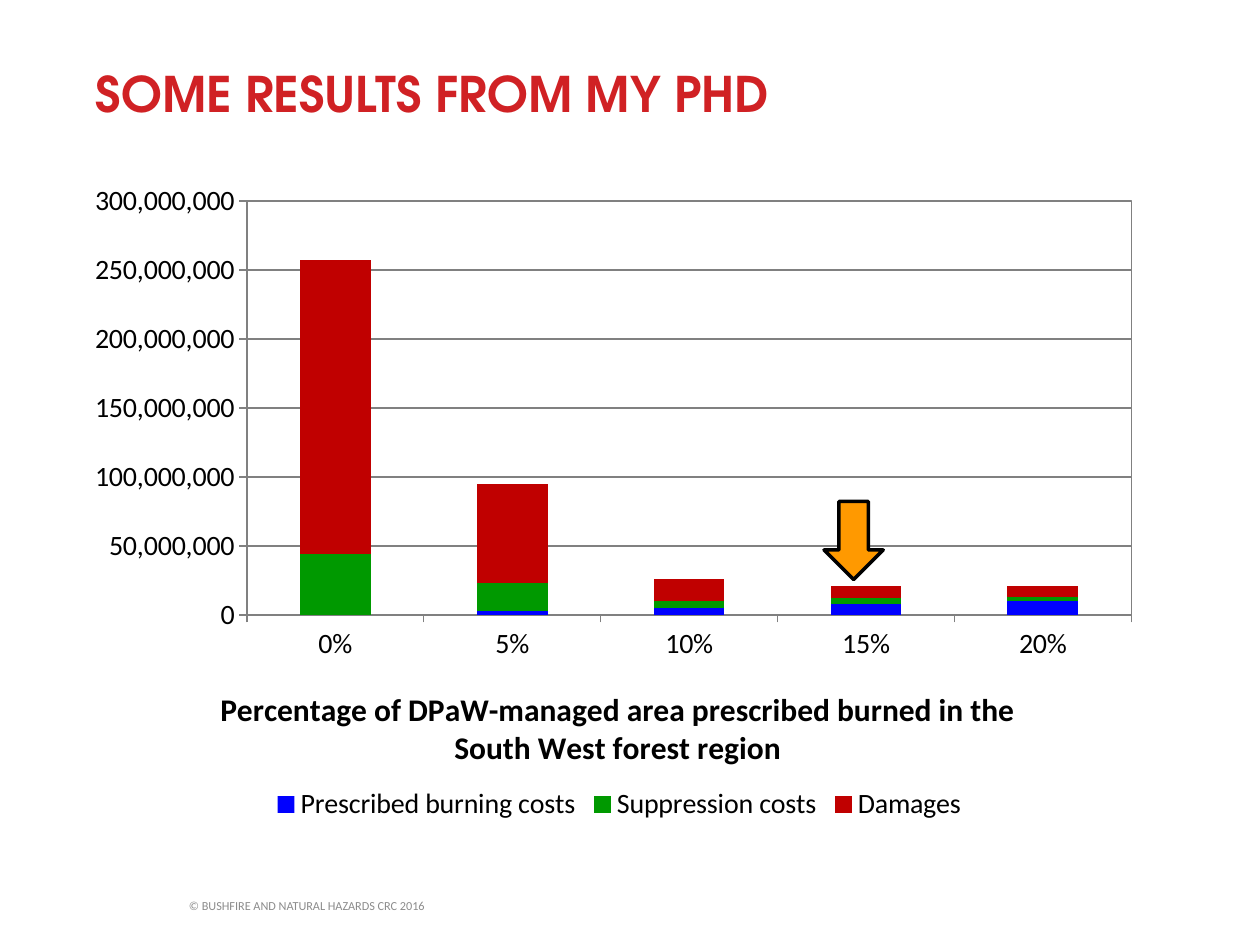
from dataclasses import dataclass

from pptx import Presentation
from pptx.chart.data import CategoryChartData
from pptx.dml.color import RGBColor
from pptx.enum.chart import XL_CHART_TYPE, XL_LEGEND_POSITION, XL_TICK_MARK
from pptx.enum.shapes import MSO_SHAPE
from pptx.enum.text import MSO_ANCHOR, PP_ALIGN
from pptx.oxml import parse_xml
from pptx.oxml.ns import nsdecls, qn
from pptx.util import Inches, Pt


@dataclass(frozen=True)
class Theme:
    heading_font: str = "TeX Gyre Adventor"
    body_font: str = "Calibri"
    title_color: str = "D02124"
    footer_color: str = "8C8C8C"
    text_color: str = "000000"
    axis_color: str = "808080"
    arrow_color: str = "FF9900"
    title_size: int = 28
    axis_title_size: int = 18
    label_size: int = 16
    footer_size: int = 7


THEME = Theme()
CATEGORIES = ["0%", "5%", "10%", "15%", "20%"]
COSTS = [
    ("Prescribed burning costs", "0000FF", [0, 3000000, 5000000, 8000000, 10000000]),
    ("Suppression costs", "009900", [44000000, 20000000, 5000000, 4000000, 3000000]),
    ("Damages", "C00000", [213000000, 72000000, 16000000, 9000000, 8000000]),
]


def format_font(font, name=THEME.body_font, size=THEME.label_size,
                color=THEME.text_color, bold=False):
    font.name = name
    font.size = Pt(size)
    font.bold = bold
    font.color.rgb = RGBColor.from_string(color)


def write_text(text_frame, text, align=PP_ALIGN.LEFT, **font_format):
    paragraph = text_frame.paragraphs[0]
    paragraph.alignment = align
    run = paragraph.add_run()
    run.text = text
    format_font(run.font, **font_format)


def set_frame(text_frame, anchor, right=0):
    text_frame.word_wrap = True
    text_frame.vertical_anchor = anchor
    text_frame.margin_left = text_frame.margin_top = text_frame.margin_bottom = 0
    text_frame.margin_right = Inches(right)


def set_layout(element, position, **fractions):
    """Place a chart part by fractions of the chart box."""
    for old_layout in element.findall(qn("c:layout")):
        element.remove(old_layout)
    target = '<c:layoutTarget val="inner"/>' if "w" in fractions else ""
    modes = '<c:xMode val="edge"/><c:yMode val="edge"/>'
    values = "".join(f'<c:{key} val="{value}"/>' for key, value in fractions.items())
    element.insert(position, parse_xml(
        f'<c:layout {nsdecls("c")}><c:manualLayout>{target}{modes}{values}'
        '</c:manualLayout></c:layout>'))


def add_title(slide, box):
    title = slide.shapes.title
    title.left, title.top, title.width, title.height = box
    set_frame(title.text_frame, MSO_ANCHOR.TOP, right=0.1)
    write_text(title.text_frame, "SOME RESULTS FROM MY PHD", name=THEME.heading_font,
               size=THEME.title_size, color=THEME.title_color, bold=True)


def add_footer(slide, box):
    footer = slide.shapes.add_textbox(*box)
    set_frame(footer.text_frame, MSO_ANCHOR.MIDDLE)
    write_text(footer.text_frame, "© BUSHFIRE AND NATURAL HAZARDS CRC 2016",
               size=THEME.footer_size, color=THEME.footer_color)


def format_line(line, color, width):
    line.color.rgb = RGBColor.from_string(color)
    line.width = Pt(width)


def format_axes(chart):
    for axis in (chart.category_axis, chart.value_axis):
        axis.major_tick_mark = XL_TICK_MARK.OUTSIDE
        axis.minor_tick_mark = XL_TICK_MARK.NONE
        format_font(axis.tick_labels.font)
        format_line(axis.format.line, THEME.axis_color, 0.75)

    value_axis = chart.value_axis
    value_axis.minimum_scale, value_axis.maximum_scale = 0, 300000000
    value_axis.major_unit = 50000000
    value_axis.tick_labels.number_format = "#,##0"
    value_axis.tick_labels.number_format_is_linked = False
    format_line(value_axis.major_gridlines.format.line, THEME.axis_color, 0.75)

    write_text(chart.category_axis.axis_title.text_frame,
               "Percentage of DPaW-managed area prescribed burned in the "
               "South West forest region",
               align=PP_ALIGN.CENTER, size=THEME.axis_title_size, bold=True)


def add_cost_chart(slide, box):
    chart_data = CategoryChartData(number_format="General")
    chart_data.categories = CATEGORIES
    for name, _, values in COSTS:
        chart_data.add_series(name, values)
    chart = slide.shapes.add_chart(XL_CHART_TYPE.COLUMN_STACKED, *box, chart_data).chart
    chart.has_title = False
    format_font(chart.font, size=10)

    plot = chart.plots[0]
    plot.gap_width, plot.overlap, plot.vary_by_categories = 150, 100, False
    for series, (_, color, _) in zip(plot.series, COSTS):
        series.format.fill.solid()
        series.format.fill.fore_color.rgb = RGBColor.from_string(color)
    format_axes(chart)

    chart.has_legend = True
    chart.legend.position = XL_LEGEND_POSITION.BOTTOM
    chart.legend.include_in_layout = False
    format_font(chart.legend.font)

    # Plot frame and the places of plot, axis title and legend
    plot_area = chart._chartSpace.find(".//" + qn("c:plotArea"))
    set_layout(plot_area, 0, x=0.16, y=0.05, w=0.82, h=0.62)
    plot_area.append(parse_xml(
        f'<c:spPr {nsdecls("c", "a")}><a:noFill/><a:ln w="{Pt(0.75)}"><a:solidFill>'
        f'<a:srgbClr val="{THEME.axis_color}"/></a:solidFill></a:ln></c:spPr>'))
    set_layout(plot_area.find(".//" + qn("c:title")), 1, x=0.13, y=0.77)
    set_layout(chart._chartSpace.find(".//" + qn("c:legend")), 1, x=0.18, y=0.92)


def add_lowest_cost_arrow(slide, box):
    arrow = slide.shapes.add_shape(MSO_SHAPE.DOWN_ARROW, *box)
    arrow.shadow.inherit = False
    arrow.fill.solid()
    arrow.fill.fore_color.rgb = RGBColor.from_string(THEME.arrow_color)
    format_line(arrow.line, THEME.text_color, 2)


def inch_box(*lengths):
    return [Inches(length) for length in lengths]


def main():
    presentation = Presentation()
    presentation.slide_width, presentation.slide_height = inch_box(10, 7.5)
    slide = presentation.slides.add_slide(presentation.slide_layouts[5])
    add_footer(slide, inch_box(1.5, 7.08, 2.07, 0.22))
    add_title(slide, inch_box(0.76, 0.5, 8.11, 1.04))
    add_cost_chart(slide, inch_box(0.59, 1.33, 8.56, 5.3))
    add_lowest_cost_arrow(slide, inch_box(6.54, 3.98, 0.47, 0.62))
    presentation.save("out.pptx")


if __name__ == "__main__":
    main()
